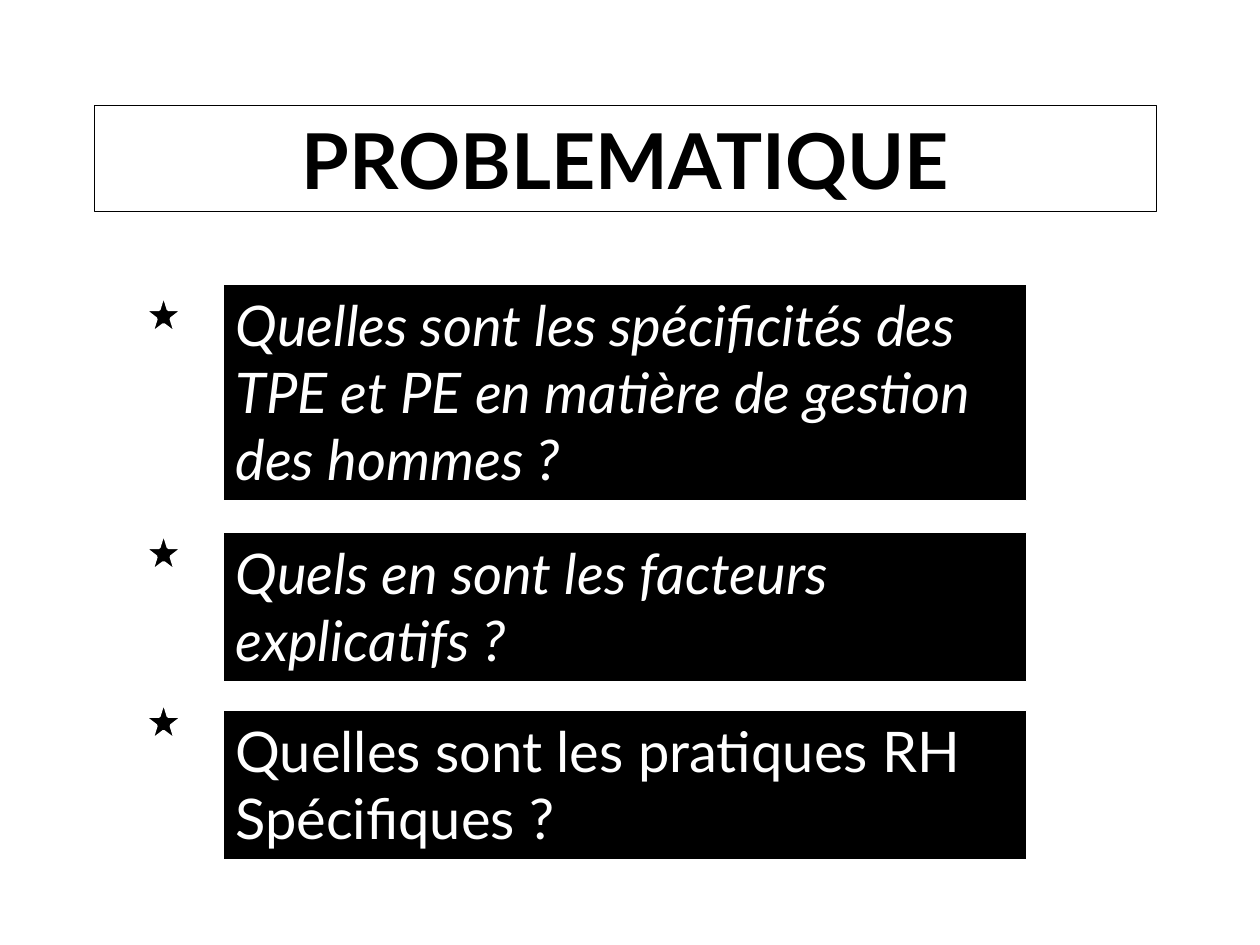
from pptx import Presentation
from pptx.dml.color import RGBColor
from pptx.enum.shapes import MSO_SHAPE
from pptx.enum.text import MSO_ANCHOR, MSO_AUTO_SIZE, PP_ALIGN
from pptx.util import Pt

RECTANGLE, STAR = MSO_SHAPE.RECTANGLE, MSO_SHAPE.STAR_5_POINT
TOP, MIDDLE = MSO_ANCHOR.TOP, MSO_ANCHOR.MIDDLE
LEFT, CENTER = PP_ALIGN.LEFT, PP_ALIGN.CENTER
GROW = MSO_AUTO_SIZE.SHAPE_TO_FIT_TEXT
TITLE_ONLY = 5
BLACK, WHITE = "000000", "FFFFFF"


def rgb(value):
    return RGBColor.from_string(value)


def write(frame, text, size=32, color=WHITE, bold=False, italic=False,
          align=LEFT, anchor=TOP, font="Lato"):
    """Fill a text frame, one paragraph for each line of text."""
    frame.text = text
    frame.word_wrap = True
    frame.auto_size = GROW
    frame.vertical_anchor = anchor
    for paragraph in frame.paragraphs:
        paragraph.alignment = align
        for run in paragraph.runs:
            run.font.name = font
            run.font.size = Pt(size)
            run.font.bold = bold
            run.font.italic = italic
            run.font.color.rgb = rgb(color)


class Deck:
    def __init__(self, width, height):
        self.presentation = Presentation()
        self.presentation.slide_width = Pt(width)
        self.presentation.slide_height = Pt(height)
        layout = self.presentation.slide_layouts[TITLE_ONLY]
        self.slide = self.presentation.slides.add_slide(layout)

    def paint(self, shape, fill, line, line_width=0.75):
        shape.fill.solid()
        shape.fill.fore_color.rgb = rgb(fill)
        shape.line.color.rgb = rgb(line)
        shape.line.width = Pt(line_width)

    def title(self, text, left, top, width, height):
        heading = self.slide.shapes.title
        heading.left, heading.top = Pt(left), Pt(top)
        heading.width, heading.height = Pt(width), Pt(height)
        self.paint(heading, WHITE, BLACK)
        write(heading.text_frame, text, size=44, color=BLACK, bold=True,
              align=CENTER, anchor=MIDDLE)

    def shape(self, kind, left, top, width, height, line_width=0.75):
        shape = self.slide.shapes.add_shape(
            kind, Pt(left), Pt(top), Pt(width), Pt(height))
        shape.shadow.inherit = False
        self.paint(shape, BLACK, WHITE, line_width)
        return shape

    def question(self, text, top, height, italic):
        box = self.shape(RECTANGLE, 127.5, top, 459.3, height)
        write(box.text_frame, text, italic=italic)

    def star(self, top):
        self.shape(STAR, 82, top, 23, 23, line_width=2)


def main():
    deck = Deck(720, 540)

    # Heading
    deck.title("PROBLEMATIQUE", 54, 60.5, 607, 60.5)

    # Questions: text, top, height, italic
    questions = [
        ("Quelles sont les spécificités des TPE et PE en matière de gestion "
         "des hommes ?", 162.3, 123.8, True),
        ("Quels en sont les facteurs explicatifs ?", 304.3, 85, True),
        ("Quelles sont les pratiques RH\nSpécifiques ?", 406, 85, False),
    ]
    for question in questions:
        deck.question(*question)

    # Star markers
    for top in (168, 304, 400.5):
        deck.star(top)

    deck.presentation.save("out.pptx")


if __name__ == "__main__":
    main()
